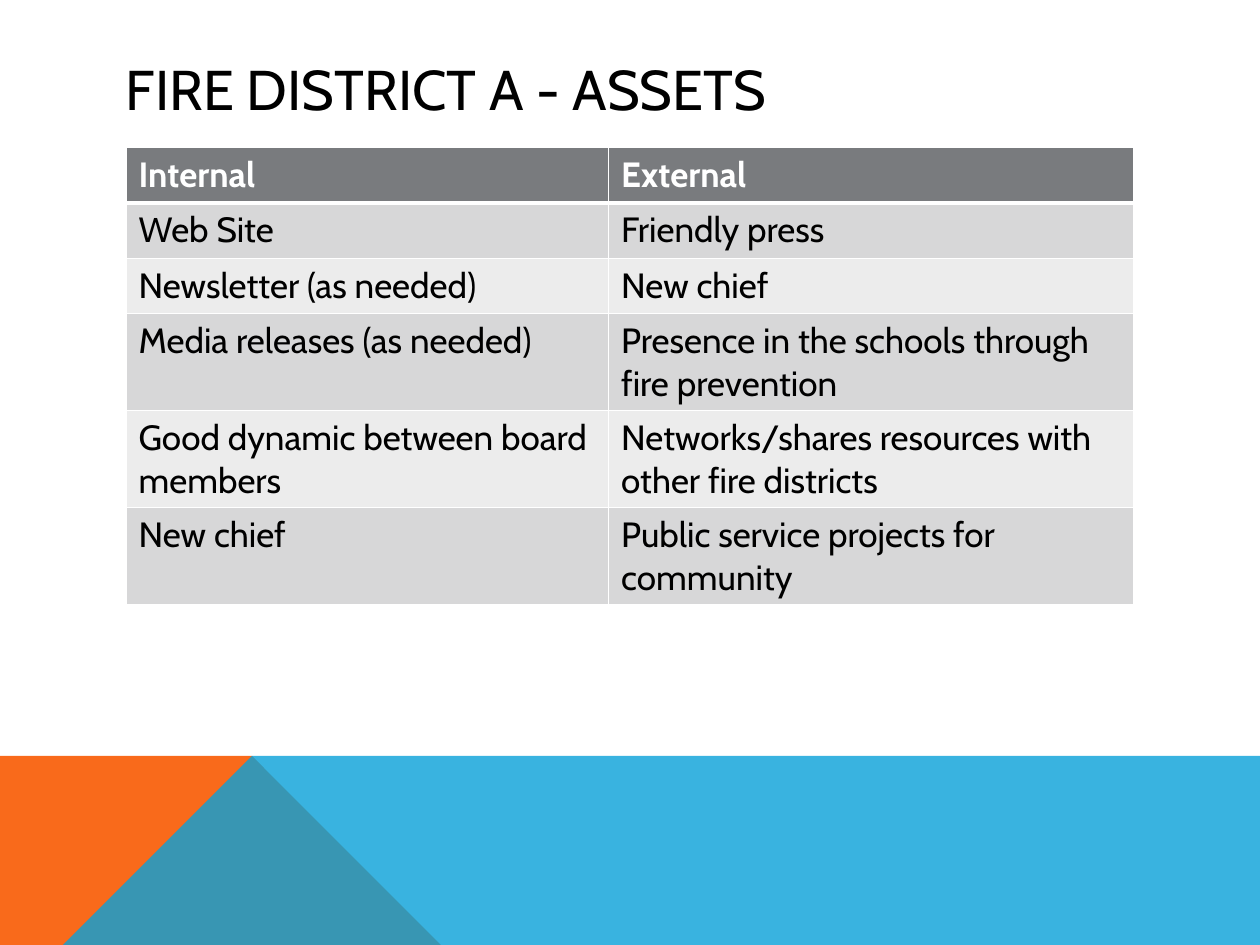
"""Build the Fire District A assets slide with a two-column table."""
from lxml import etree
from pptx import Presentation
from pptx.dml.color import RGBColor
from pptx.enum.text import MSO_ANCHOR
from pptx.oxml.ns import qn
from pptx.util import Inches, Pt

MIDDLE = MSO_ANCHOR.MIDDLE
THEME = {
    "font": "Cabin", "title_size": 32, "table_size": 20,
    "text": "000000", "white": "FFFFFF", "header": "797B7E",
    "bands": ("ECECEC", "D7D7D8"), "orange": "F96A1B", "blue": "08A1D9",
}
WIDTH, HEIGHT = 10, 7.5
BAND_TOP, PEAK = 5.52, 2.23
COLUMNS = (3.83, 4.17)
LINE, DOUBLE_LINE = 0.44, 0.77
ROWS = (
    (LINE, "Internal", "External"),
    (LINE, "Web Site", "Friendly press"),
    (LINE, "Newsletter (as needed)", "New chief"),
    (DOUBLE_LINE, "Media releases (as needed)", "Presence in the schools through fire prevention"),
    (DOUBLE_LINE, "Good dynamic between board members", "Networks/shares resources with other fire districts"),
    (DOUBLE_LINE, "New chief", "Public service projects for community"),
)
BANDS = (
    ("orange", 100, ((0, HEIGHT), (0, BAND_TOP), (PEAK, BAND_TOP), (3.91, HEIGHT))),
    ("blue", 80, ((0, HEIGHT), (PEAK, BAND_TOP), (WIDTH, BAND_TOP), (WIDTH, HEIGHT))),
)


def write_text(paragraph, text, size, color, bold=False):
    paragraph.text = text
    font = paragraph.runs[0].font
    for name, value in {"name": THEME["font"], "size": Pt(size), "bold": bold}.items():
        setattr(font, name, value)
    font.color.rgb = RGBColor.from_string(color)


def add_border(cell, side, points):
    line = etree.SubElement(cell._tc.get_or_add_tcPr(), qn(f"a:ln{side}"), w=str(Pt(points)))
    fill = etree.SubElement(line, qn("a:solidFill"))
    etree.SubElement(fill, qn("a:srgbClr"), val=THEME["white"])


presentation = Presentation()
presentation.slide_width, presentation.slide_height = Inches(WIDTH), Inches(HEIGHT)
slide = presentation.slides.add_slide(presentation.slide_layouts[6])

for color, opacity, points in BANDS:
    builder = slide.shapes.build_freeform(*points[0], scale=Inches(1))
    builder.add_line_segments(points[1:], close=True)
    shape = builder.convert_to_shape()
    shape.shadow.inherit = False
    shape.line.fill.background()
    shape.fill.solid()
    shape.fill.fore_color.rgb = RGBColor.from_string(THEME[color])
    if opacity < 100:
        color_element = shape.fill._xPr.find(".//" + qn("a:srgbClr"))
        etree.SubElement(color_element, qn("a:alpha"), val=str(opacity * 1000))

title = slide.shapes.add_textbox(Inches(0.9), Inches(0.4), Inches(8.22), Inches(0.6))
title.text_frame.word_wrap = True
title.text_frame.vertical_anchor = MIDDLE
write_text(title.text_frame.paragraphs[0], "FIRE DISTRICT A - ASSETS", THEME["title_size"], THEME["text"])

table = slide.shapes.add_table(
    len(ROWS), len(COLUMNS), Inches(1), Inches(1.17),
    Inches(sum(COLUMNS)), Inches(sum(row[0] for row in ROWS)),
).table
for column, width in zip(table.columns, COLUMNS):
    column.width = Inches(width)
for row_index, (height, *texts) in enumerate(ROWS):
    is_header = row_index == 0
    table.rows[row_index].height = Inches(height)
    fill_color = THEME["header"] if is_header else THEME["bands"][row_index % 2]
    text_color = THEME["white"] if is_header else THEME["text"]
    for column_index, text in enumerate(texts):
        cell = table.cell(row_index, column_index)
        for side in "LRTB":
            thick = (side == "B" and is_header) or (side == "T" and row_index == 1)
            add_border(cell, side, 3 if thick else 1)
        cell.fill.solid()
        cell.fill.fore_color.rgb = RGBColor.from_string(fill_color)
        write_text(cell.text_frame.paragraphs[0], text, THEME["table_size"], text_color, is_header)

presentation.save("out.pptx")
